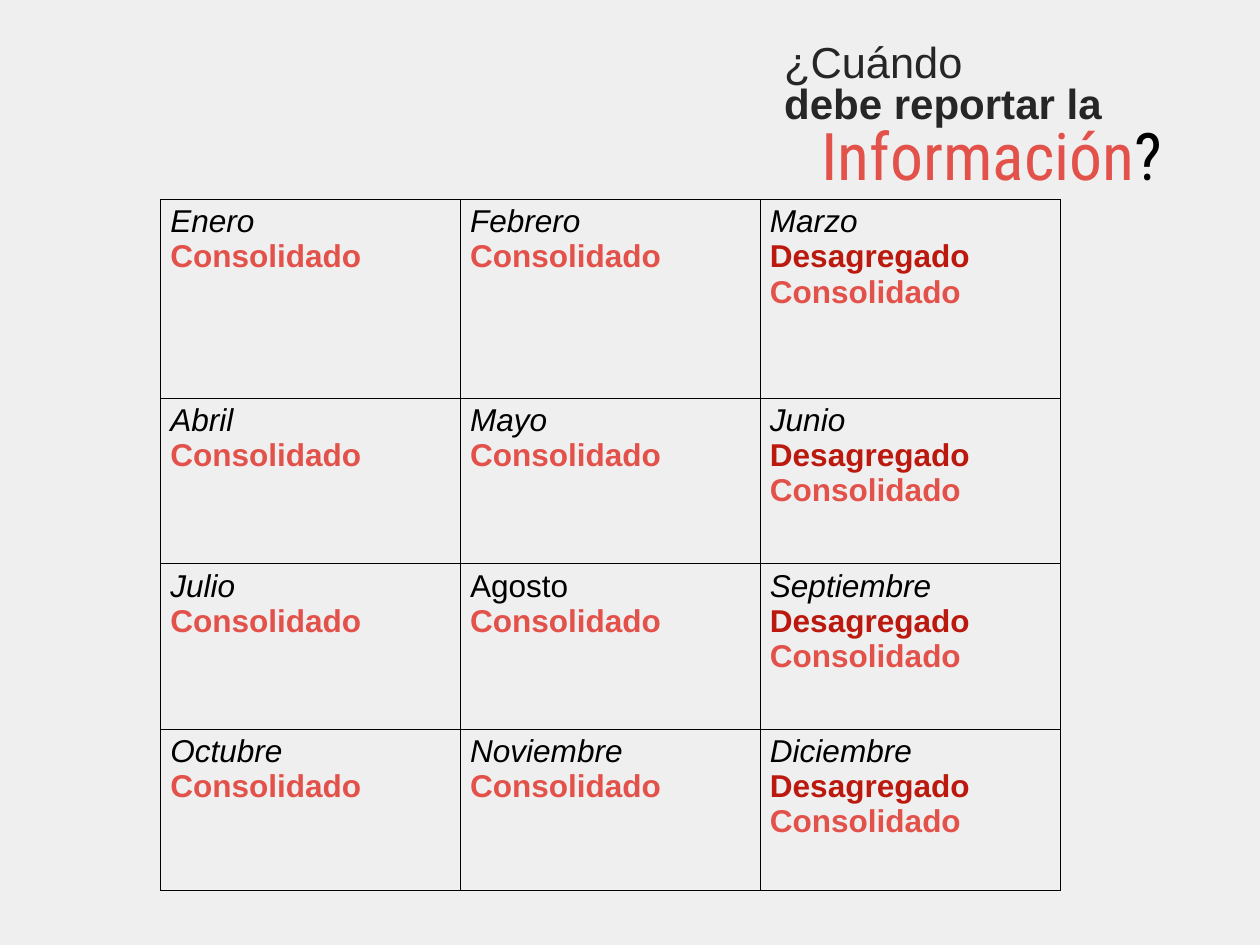
from pptx import Presentation
from pptx.dml.color import RGBColor
from pptx.enum import text as t
from pptx.oxml import parse_xml
from pptx.util import Inches, Pt

MONTHS = [
    ["Enero", "Febrero", "Marzo"],
    ["Abril", "Mayo", "Junio"],
    ["Julio", "Agosto", "Septiembre"],
    ["Octubre", "Noviembre", "Diciembre"],
]
UPRIGHT = {"Agosto"}
MONTHLY = "Consolidado"
QUARTER = "Desagregado"

THEME = dict(
    back="EFEFEF", ink="000000", dark="262626", coral="E3524A", red="BB190E",
    body="Arial", accent="Roboto Condensed",
    lead=33, ask=32, topic=50, cell=24, rule=1,
)
HEADS = [
    ((8.16, 0.41, 4.9, 1.1), t.PP_ALIGN.LEFT, 0.8, [
        [("¿Cuándo", "body", "lead", "dark", {})],
        [("debe reportar la", "body", "ask", "dark", {"bold": True})],
    ]),
    ((7.95, 1.14, 4.47, 0.98), t.PP_ALIGN.RIGHT, 1.0, [
        [("Información", "accent", "topic", "coral", {}),
         ("?", "accent", "topic", "ink", {})],
    ]),
]
LEFT, TOP, COL = 1.7, 2.11, 3.17
ROWS = [2.1, 1.75, 1.75, 1.7]
PADS = dict(margin_left=0.13, margin_right=0.13, margin_top=0.07, margin_bottom=0.07)
NS = "http://schemas.openxmlformats.org/drawingml/2006/main"


def color(key):
    return RGBColor.from_string(THEME[key])


def write(frame, lines, align, space):
    for i, line in enumerate(lines):
        para = frame.paragraphs[0] if i == 0 else frame.add_paragraph()
        para.alignment, para.line_spacing = align, space
        for words, face, size, ink, extra in line:
            run = para.add_run()
            run.text = words
            form = dict(name=THEME[face], size=Pt(THEME[size]), **extra)
            for key, val in form.items():
                setattr(run.font, key, val)
            run.font.color.rgb = color(ink)


def border(cell):
    props = cell._tc.get_or_add_tcPr()
    for i, side in enumerate(("lnL", "lnR", "lnT", "lnB")):
        props.insert(i, parse_xml(
            f'<a:{side} xmlns:a="{NS}" w="{Pt(THEME["rule"])}"><a:solidFill>'
            f'<a:srgbClr val="{THEME["ink"]}"/></a:solidFill></a:{side}>'))


def entry(month, last):
    kinds = [(QUARTER, "red")] * last + [(MONTHLY, "coral")]
    return [[(month, "body", "cell", "ink", {"italic": month not in UPRIGHT})]] + [
        [(kind, "body", "cell", ink, {"bold": True})] for kind, ink in kinds]


def main():
    deck = Presentation()
    deck.slide_width, deck.slide_height = Inches(13.32), Inches(9.99)
    slide = deck.slides.add_slide(deck.slide_layouts[6])
    slide.background.fill.solid()
    slide.background.fill.fore_color.rgb = color("back")

    for place, align, space, lines in HEADS:
        frame = slide.shapes.add_textbox(*map(Inches, place)).text_frame
        frame.word_wrap = True
        for key, val in PADS.items():
            setattr(frame, key, Inches(val))
        write(frame, lines, align, space)

    cols = len(MONTHS[0])
    size = (LEFT, TOP, COL * cols, sum(ROWS))
    table = slide.shapes.add_table(len(ROWS), cols, *map(Inches, size)).table
    table.first_row = table.horz_banding = False
    for col in table.columns:
        col.width = Inches(COL)
    for r, (high, months) in enumerate(zip(ROWS, MONTHS)):
        table.rows[r].height = Inches(high)
        for c, month in enumerate(months):
            cell = table.cell(r, c)
            cell.fill.background()
            border(cell)
            write(cell.text_frame, entry(month, c == cols - 1), t.PP_ALIGN.LEFT, 1.0)

    deck.save("out.pptx")


if __name__ == "__main__":
    main()
